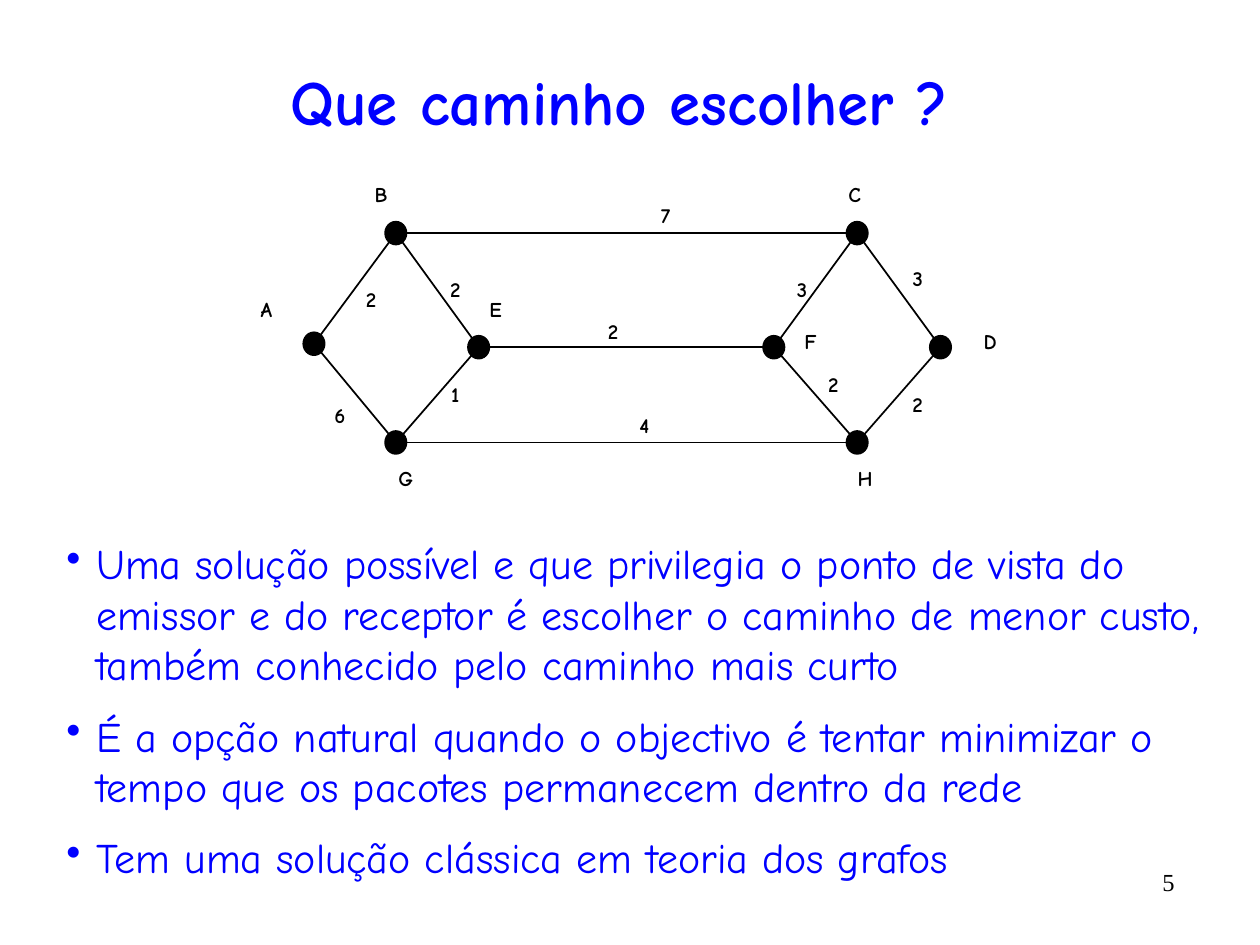
from lxml import etree
from pptx import Presentation
from pptx.dml.color import RGBColor
from pptx.enum.shapes import MSO_CONNECTOR, MSO_SHAPE
from pptx.enum.text import MSO_ANCHOR, PP_ALIGN
from pptx.oxml.ns import qn
from pptx.util import Cm, Pt

LINE, OVAL = MSO_CONNECTOR.STRAIGHT, MSO_SHAPE.OVAL
LEFT, MID, RIGHT = PP_ALIGN.LEFT, PP_ALIGN.CENTER, PP_ALIGN.RIGHT
CENTRE, TOP = MSO_ANCHOR.MIDDLE, MSO_ANCHOR.TOP

COMIC, TIMES = "Comic Neue", "Times New Roman"
BLUE, BLACK = "0000FF", "000000"
DOT = (0.43, 0.46)
TAG = (0.8, 0.74)

NODES = {
    "A": ((1.38, 3.33), (0.42, 2.69)),
    "B": ((3.03, 1.1), (2.73, 0.37)),
    "C": ((12.33, 1.1), (12.28, 0.37)),
    "D": ((14.01, 3.4), (15.01, 3.32)),
    "E": ((4.7, 3.4), (5.04, 2.69)),
    "F": ((10.65, 3.4), (11.39, 3.32)),
    "G": ((3.03, 5.32), (3.23, 6.09)),
    "H": ((12.33, 5.32), (12.49, 6.09)),
}
EDGES = [
    ("AB", "2", (2.53, 2.48)),
    ("BE", "2", (4.23, 2.28)),
    ("EG", "1", (4.23, 4.39)),
    ("AG", "6", (1.9, 4.82)),
    ("CF", "3", (11.22, 2.28)),
    ("CD", "3", (13.55, 2.05)),
    ("DH", "2", (13.55, 4.59)),
    ("FH", "2", (11.85, 4.19)),
    ("EF", "2", (7.41, 3.12)),
    ("BC", "7", (8.47, 0.78)),
    ("GH", "4", (8.04, 5.02)),
]
POINTS = [
    "Uma solução possível e que privilegia o ponto de vista do emissor e do "
    "receptor é escolher o caminho de menor custo, também conhecido pelo "
    "caminho mais curto",
    "É a opção natural quando o objectivo é tentar minimizar o tempo que os "
    "pacotes permanecem dentro da rede",
    "Tem uma solução clássica em teoria dos grafos",
]


def colour(code):
    """Turn a hex string into a colour."""
    return RGBColor.from_string(code)


def write(para, text, size, hue, font=COMIC, bold=False, align=LEFT):
    """Add one formatted run to a paragraph."""
    para.alignment = align
    run = para.add_run()
    run.text = text
    run.font.name, run.font.size, run.font.bold = font, Pt(size), bold
    run.font.color.rgb = colour(hue)


def add_text(slide, box, wrap=True):
    """Add a text box and return its frame."""
    frame = slide.shapes.add_textbox(*map(Cm, box)).text_frame
    frame.word_wrap = wrap
    frame.vertical_anchor = TOP
    return frame


def add_title(slide, box, text):
    """Place and format the title."""
    title = slide.shapes.title
    title.left, title.top, title.width, title.height = map(Cm, box)
    frame = title.text_frame
    frame.vertical_anchor = CENTRE
    write(frame.paragraphs[0], text, 36, BLUE, bold=True, align=MID)


def add_list(slide, box, items):
    """Write the bulleted points."""
    frame = add_text(slide, box)
    for i, item in enumerate(items):
        para = frame.add_paragraph() if i else frame.paragraphs[0]
        para.space_before = Pt(12)
        write(para, item, 24, BLUE)
        props = para._p.get_or_add_pPr()
        props.set("marL", str(Cm(0.6)))
        props.set("indent", str(Cm(-0.6)))
        etree.SubElement(props, qn("a:buChar")).set("char", "•")


def add_edge(group, start, end):
    """Join two points with a thin line."""
    line = group.shapes.add_connector(LINE, *map(Cm, start + end))
    line.line.width = Pt(1)
    line.line.color.rgb = colour(BLACK)
    etree.SubElement(line._element.spPr, qn("a:effectLst"))


def add_dot(group, x, y):
    """Draw a node centred on a point."""
    wide, high = DOT
    dot = group.shapes.add_shape(
        OVAL, Cm(x - wide / 2), Cm(y - high / 2), Cm(wide), Cm(high))
    dot.shadow.inherit = False
    dot.fill.solid()
    dot.fill.fore_color.rgb = colour(BLACK)
    dot.line.color.rgb = colour(BLACK)
    dot.line.width = Pt(1)


def add_tag(group, x, y, text):
    """Write a short label centred on a point."""
    wide, high = TAG
    frame = add_text(group, (x - wide / 2, y - high / 2, wide, high), False)
    para = frame.paragraphs[0]
    para.line_spacing = 0.9
    write(para, text, 12, BLACK, bold=True, align=MID)


def add_graph(slide, left, top):
    """Draw the weighted graph from its top left corner."""
    def place(spot):
        """Shift a point into the graph's box."""
        return left + spot[0], top + spot[1]

    group = slide.shapes.add_group_shape()
    for ends, cost, spot in EDGES:
        add_edge(group, *(place(NODES[end][0]) for end in ends))
        add_tag(group, *place(spot), cost)
    for name, (centre, spot) in NODES.items():
        add_dot(group, *place(centre))
        add_tag(group, *place(spot), name)


def add_page(slide, box, number):
    """Write the page number."""
    para = add_text(slide, box).paragraphs[0]
    write(para, number, 14, BLACK, TIMES, align=RIGHT)


def main():
    """Build and save the slide."""
    deck = Presentation()
    deck.slide_width, deck.slide_height = Cm(25.4), Cm(19.05)
    slide = deck.slides.add_slide(deck.slide_layouts[5])
    add_title(slide, (0.84, 1.07, 23.29, 1.9), "Que caminho escolher ?")
    add_list(slide, (1.09, 10.72, 23.93, 7.75), POINTS)
    add_page(slide, (21.39, 17.35, 2.54, 1.07), "5")
    add_graph(slide, 4.95, 3.6)
    deck.save("out.pptx")


if __name__ == "__main__":
    main()
